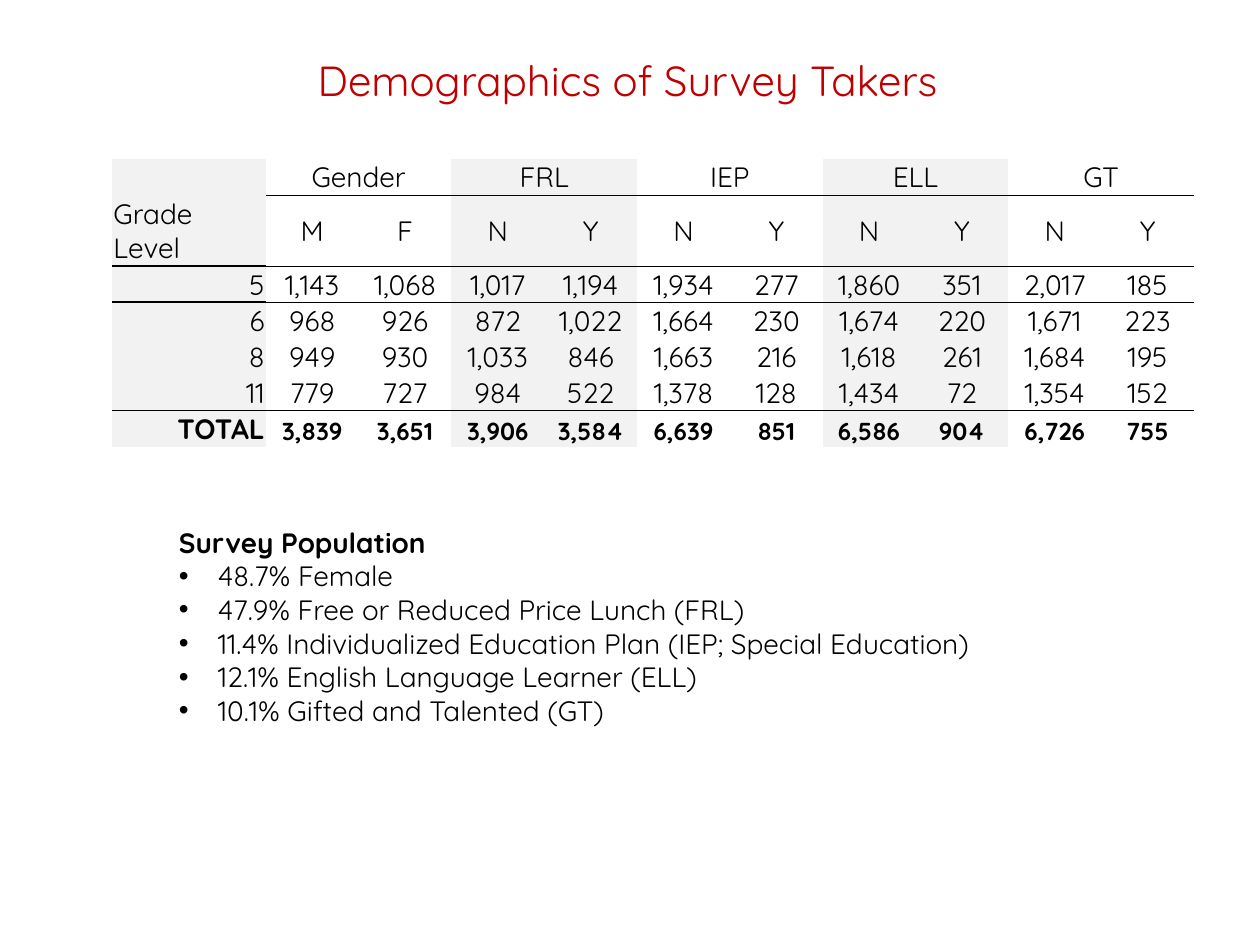
from lxml import etree
from pptx import Presentation
from pptx.dml.color import RGBColor
from pptx.enum.text import MSO_ANCHOR, MSO_AUTO_SIZE, PP_ALIGN
from pptx.oxml.ns import qn
from pptx.util import Inches, Pt

LEFT, MID, RIGHT = PP_ALIGN.LEFT, PP_ALIGN.CENTER, PP_ALIGN.RIGHT
CENTER, BOTTOM = MSO_ANCHOR.MIDDLE, MSO_ANCHOR.BOTTOM
FIXED = MSO_AUTO_SIZE.NONE
COLORS = {"red": "C00000", "black": "000000", "gray": "F2F2F2"}
PLAIN = "{2D5ABB26-0587-4C30-8999-92F81FD0307C}"

GROUPS = ["Gender", "FRL", "IEP", "ELL", "GT"]
ROWS = [
    ["Grade Level", "M", "F"] + ["N", "Y"] * 4,
    ["5", "1,143", "1,068", "1,017", "1,194", "1,934", "277", "1,860", "351", "2,017", "185"],
    ["6", "968", "926", "872", "1,022", "1,664", "230", "1,674", "220", "1,671", "223"],
    ["8", "949", "930", "1,033", "846", "1,663", "216", "1,618", "261", "1,684", "195"],
    ["11", "779", "727", "984", "522", "1,378", "128", "1,434", "72", "1,354", "152"],
    ["TOTAL", "3,839", "3,651", "3,906", "3,584", "6,639", "851", "6,586", "904", "6,726", "755"],
]
FACTS = [
    "48.7% Female",
    "47.9% Free or Reduced Price Lunch (FRL)",
    "11.4% Individualized Education Plan (IEP; Special Education)",
    "12.1% English Language Learner (ELL)",
    "10.1% Gifted and Talented (GT)",
]


class Deck:
    """Hold the text style and the current slide, and add elements to it."""

    def __init__(self):
        self.prs = Presentation()
        self.prs.slide_width, self.prs.slide_height = Inches(10), Inches(7.5)
        self.slide = self.prs.slides.add_slide(self.prs.slide_layouts[1])
        self.font = "Quicksand"

    def label(self, para, text, size=16, bold=False, color="black", align=LEFT):
        para.alignment = align
        run = para.add_run()
        run.text = text
        looks = {"name": self.font, "size": Pt(size), "bold": bold}
        for name, value in looks.items():
            setattr(run.font, name, value)
        run.font.color.rgb = RGBColor.from_string(COLORS[color])

    def place(self, shape, *box):
        for name, value in zip(("left", "top", "width", "height"), box):
            setattr(shape, name, Inches(value))

    def title(self, text, *box):
        shape = self.slide.shapes.title
        self.place(shape, *box)
        shape.text_frame.auto_size = FIXED
        shape.text_frame.vertical_anchor = CENTER
        self.label(shape.text_frame.paragraphs[0], text, 24, color="red", align=MID)

    def bullets(self, head, items, *box):
        shape = self.slide.placeholders[1]
        self.place(shape, *box)
        frame = shape.text_frame
        frame.auto_size = FIXED
        for i, text in enumerate([head] + items):
            para = frame.add_paragraph() if i else frame.paragraphs[0]
            props = para._p.get_or_add_pPr()
            indent = Inches(0.31) if i else 0
            props.set("marL", str(indent))
            props.set("indent", str(-indent))
            if i:
                etree.SubElement(props, qn("a:buChar"), char="•")
            else:
                etree.SubElement(props, qn("a:buNone"))
            para.space_before = Pt(0)
            self.label(para, text, bold=not i)

    def rule(self, cell, side, width):
        line = etree.SubElement(cell._tc.get_or_add_tcPr(), qn("a:ln" + side), w=str(Pt(width)))
        fill = etree.SubElement(line, qn("a:solidFill"))
        etree.SubElement(fill, qn("a:srgbClr"), val=COLORS["black"])

    def cell(self, cell, row, col, text):
        total = row == 6 and col > 0
        looks = {
            "margin_left": Inches(0.01), "margin_top": Inches(0.01),
            "margin_right": Inches(0.01), "margin_bottom": 0,
            "vertical_anchor": BOTTOM if total else CENTER,
        }
        for name, value in looks.items():
            setattr(cell, name, value)
        width = 0.5 if col else 1
        if row in (2, 6) or (row == 1 and col):
            self.rule(cell, "T", width)
        if row in (1, 5) or (row == 0 and col):
            self.rule(cell, "B", width)
        if col % 4 in (3, 0):
            cell.fill.solid()
            cell.fill.fore_color.rgb = RGBColor.from_string(COLORS["gray"])
        else:
            cell.fill.background()
        para = cell.text_frame.paragraphs[0]
        align = MID if col else LEFT if row == 1 else RIGHT
        if text:
            self.label(para, text, 14 if total else 16, row == 6, align=align)
        else:
            etree.SubElement(para._p, qn("a:endParaRPr"), sz="1600")

    def table(self, groups, rows, left, top, width, height):
        top_row = [""]
        for name in groups:
            top_row += [name, ""]
        grid = [top_row] + rows
        box = [Inches(n) for n in (left, top, width, height)]
        table = self.slide.shapes.add_table(len(grid), len(top_row), *box).table
        table.first_row = table.horz_banding = False
        table._tbl.tblPr.find(qn("a:tableStyleId")).text = PLAIN
        first, tall = 1.22, 0.56
        for i, col in enumerate(table.columns):
            col.width = Inches((width - first) / (len(top_row) - 1) if i else first)
        for i, row in enumerate(table.rows):
            row.height = Inches(tall if i == 1 else (height - tall) / (len(grid) - 1))
        for r, line in enumerate(grid):
            for c, text in enumerate(line):
                self.cell(table.cell(r, c), r, c, text)
        for c in range(1, len(top_row), 2):
            table.cell(0, c).merge(table.cell(0, c + 1))


def main():
    deck = Deck()
    deck.title("Demographics of Survey Takers", 0.48, 0.01, 9, 1.25)
    deck.table(GROUPS, ROWS, 0.89, 1.26, 8.59, 2.28)
    deck.bullets("Survey Population", FACTS, 1.32, 4.12, 8.34, 1.72)
    deck.prs.save("out.pptx")


if __name__ == "__main__":
    main()
